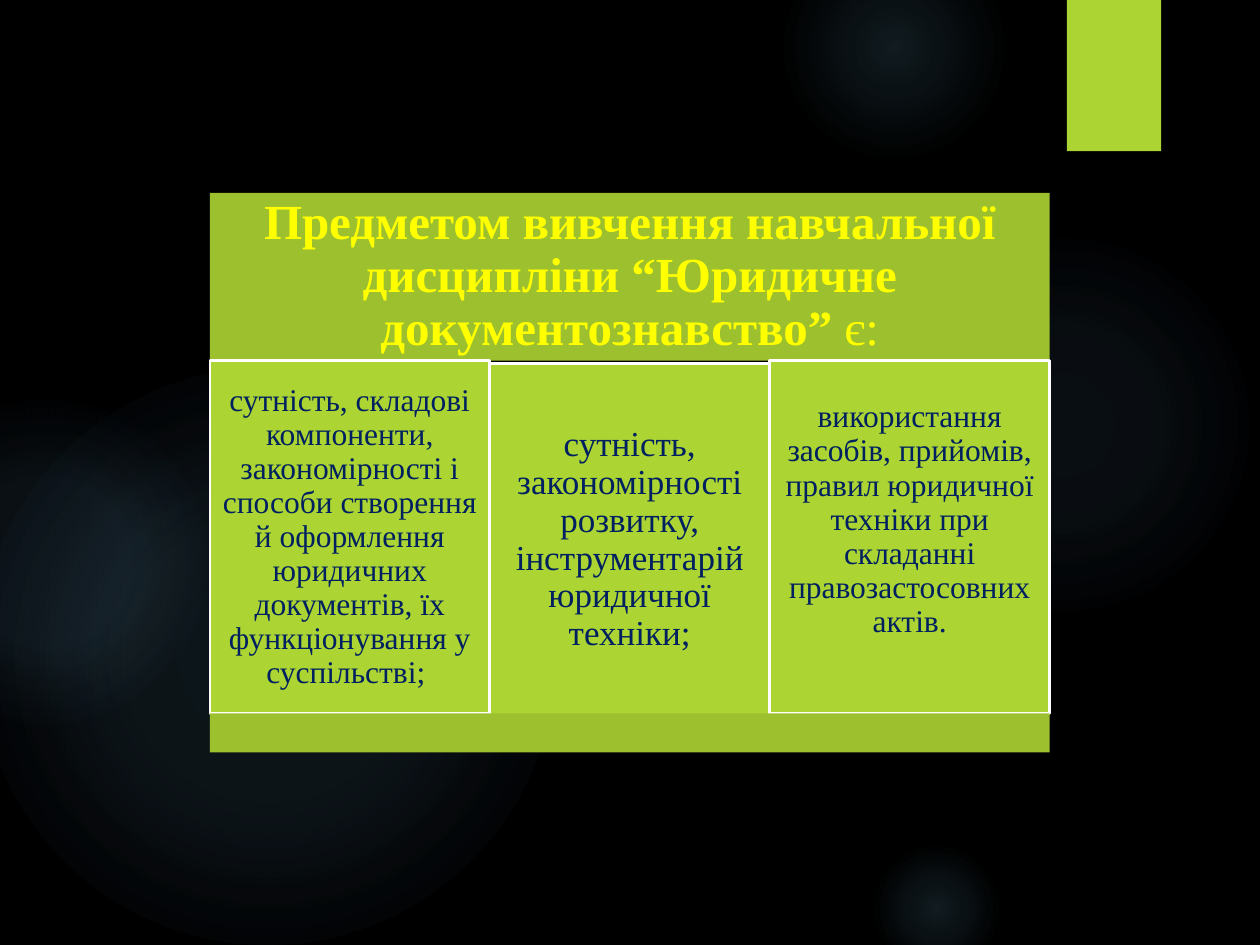
from lxml import etree
from pptx import Presentation
from pptx.dml.color import RGBColor
from pptx.enum.shapes import MSO_SHAPE as Preset
from pptx.enum.text import MSO_ANCHOR as Anchor, MSO_AUTO_SIZE as AutoSize, PP_ALIGN as Align
from pptx.oxml.ns import qn
from pptx.util import Cm, Pt

BLACK = RGBColor(0x00, 0x00, 0x00)
WHITE = RGBColor(0xFF, 0xFF, 0xFF)
LIME = RGBColor(0xAC, 0xD4, 0x33)
DARK_LIME = RGBColor(0x9C, 0xC0, 0x2E)
YELLOW = RGBColor(0xFF, 0xFF, 0x00)
NAVY = RGBColor(0x00, 0x20, 0x60)
GLOW = RGBColor(0x7A, 0xC4, 0xF0)
FONT = "Times New Roman"

# Content
TITLE = [("Предметом вивчення навчальної дисципліни “Юридичне документознавство” ", True),
         ("є:", False)]
# text, size in points, drop below the title, side inset, bottom inset
COLUMNS = [
    ("сутність, складові компоненти, закономірності і способи створення й оформлення "
     "юридичних документів, їх функціонування у суспільстві; ", 18, 0, 0.18, 0.18),
    ("сутність, закономірності розвитку, інструментарій юридичної техніки;",
     20, 0.06, 0.2, 0.2),
    ("використання засобів, прийомів, правил юридичної техніки при складанні "
     "правозастосовних актів.", 18, 0, 0.18, 0.87),
]
# left, top, diameter, gradient stops as (position %, opacity %)
GLOWS = [
    (17.5, 4.65, 7.82, [(0, 7), (36, 6), (69, 0)]),
    (15.8, -1.27, 4.45, [(0, 14), (36, 7), (73, 0)]),
    (17.5, 16.94, 2.74, [(0, 14), (36, 7), (66, 0)]),
    (-0.43, 7.42, 11.63, [(0, 11), (36, 10), (75, 0)]),
    (-2.34, 8.05, 6.55, [(0, 8), (36, 8), (72, 0)]),
]

# Layout in centimetres
LEFT, TOP, WIDTH = 4.23, 3.89, 16.93
TITLE_HEIGHT, COLUMN_HEIGHT, BAR_HEIGHT = 3.38, 7.11, 0.79
COLUMN_TOP = TOP + TITLE_HEIGHT
COLUMN_WIDTH = WIDTH / len(COLUMNS)


def add_block(slide, left, top, width, height, fill=None, line=None, preset=Preset.RECTANGLE):
    shape = slide.shapes.add_shape(preset, Cm(left), Cm(top), Cm(width), Cm(height))
    shape.shadow.inherit = False
    if fill is not None:
        shape.fill.solid()
        shape.fill.fore_color.rgb = fill
    if line is None:
        shape.line.fill.background()
    else:
        shape.line.color.rgb = line
        shape.line.width = Pt(1.5)
    return shape


def set_radial_glow(shape, stops):
    properties = shape._element.spPr
    gradient = etree.Element(qn("a:gradFill"), rotWithShape="1")
    stop_list = etree.SubElement(gradient, qn("a:gsLst"))
    for position, opacity in stops:
        stop = etree.SubElement(stop_list, qn("a:gs"), pos=str(position * 1000))
        color = etree.SubElement(stop, qn("a:srgbClr"), val=str(GLOW))
        etree.SubElement(color, qn("a:alpha"), val=str(opacity * 1000))
    circle = etree.SubElement(gradient, qn("a:path"))
    circle.set("path", "circle")
    etree.SubElement(circle, qn("a:fillToRect"), l="50000", t="50000", r="50000", b="50000")
    properties.find(qn("a:prstGeom")).addnext(gradient)


def write_text(shape, runs, size, color, inset, bottom=None):
    frame = shape.text_frame
    frame.word_wrap = True
    frame.auto_size = AutoSize.NONE
    frame.vertical_anchor = Anchor.MIDDLE
    frame.margin_left = frame.margin_right = frame.margin_top = Cm(inset)
    frame.margin_bottom = Cm(inset if bottom is None else bottom)
    paragraph = frame.paragraphs[0]
    paragraph.alignment = Align.CENTER
    paragraph.line_spacing = 0.9
    for text, bold in runs:
        run = paragraph.add_run()
        run.text = text
        run.font.name = FONT
        run.font.size = Pt(size)
        run.font.bold = bold
        run.font.color.rgb = color


def main():
    presentation = Presentation()
    presentation.slide_width, presentation.slide_height = Cm(25.4), Cm(19.05)
    slide = presentation.slides.add_slide(presentation.slide_layouts[5])

    # Background glows and corner tab
    slide.background.fill.solid()
    slide.background.fill.fore_color.rgb = BLACK
    for left, top, diameter, stops in GLOWS:
        glow = add_block(slide, left, top, diameter, diameter, preset=Preset.OVAL)
        set_radial_glow(glow, stops)
    add_block(slide, 21.51, 0, 1.9, 3.05, LIME)

    # Title band, moved in front of the background
    title = slide.shapes.title
    title.left, title.top, title.width, title.height = (
        Cm(LEFT), Cm(TOP), Cm(WIDTH), Cm(TITLE_HEIGHT))
    title.fill.solid()
    title.fill.fore_color.rgb = DARK_LIME
    write_text(title, TITLE, 28, YELLOW, 0.3)
    slide.shapes._spTree.append(title._element)

    # Three columns
    for index, (text, size, drop, inset, bottom) in enumerate(COLUMNS):
        column = add_block(slide, LEFT + index * COLUMN_WIDTH, COLUMN_TOP + drop,
                           COLUMN_WIDTH, COLUMN_HEIGHT, LIME, WHITE)
        write_text(column, [(text, False)], size, NAVY, inset, bottom)

    # Bottom bar
    add_block(slide, LEFT, COLUMN_TOP + COLUMN_HEIGHT, WIDTH, BAR_HEIGHT, DARK_LIME)
    presentation.save("out.pptx")


if __name__ == "__main__":
    main()
